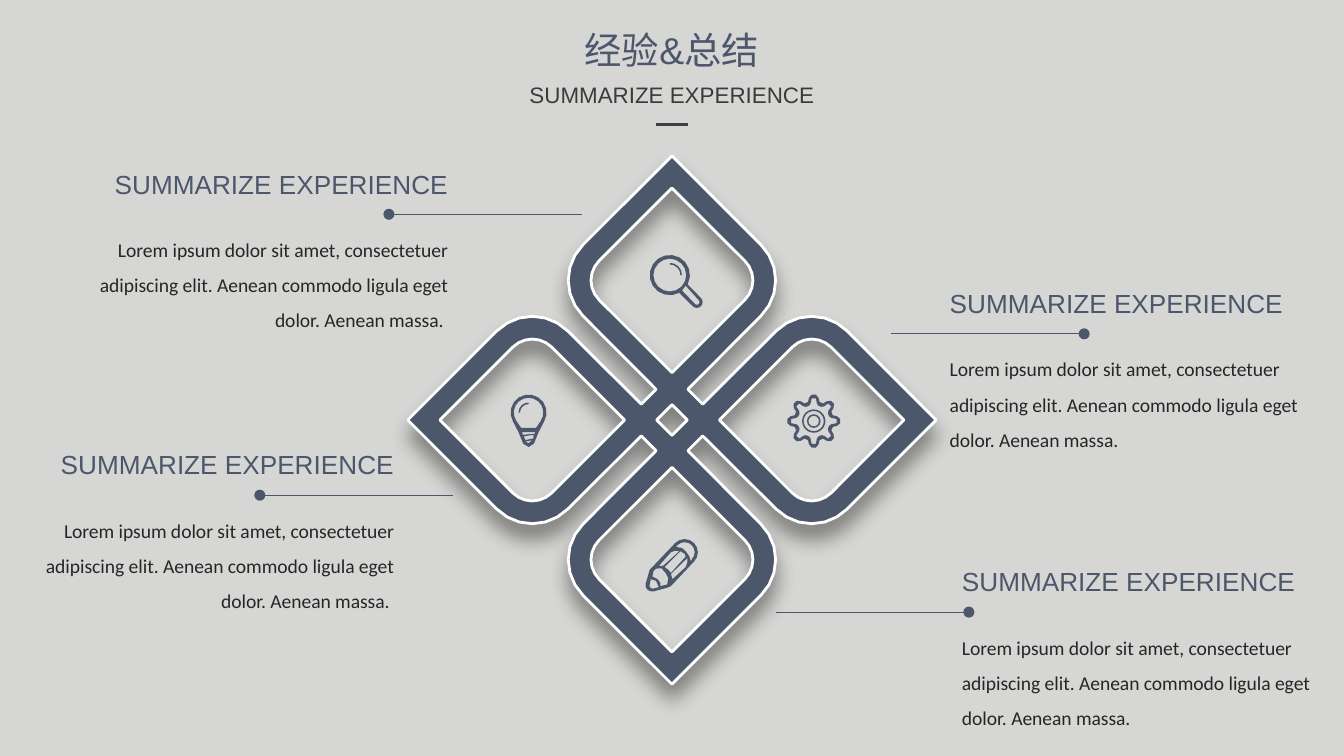
import math

from lxml import etree
from pptx import Presentation
from pptx import util as u
from pptx.dml.color import RGBColor
from pptx.enum import shapes, text
from pptx.oxml import ns

SLATE, WHITE = "4C576B", "FFFFFF"
LOREM = ("Lorem ipsum dolor sit amet, consectetuer adipiscing elit. "
         "Aenean commodo ligula eget dolor. Aenean massa.")
LEFT, CENTER, RIGHT = text.PP_ALIGN.LEFT, text.PP_ALIGN.CENTER, text.PP_ALIGN.RIGHT


def color(value):
    return RGBColor.from_string(value)


def add_text(slide, box, words, size, font, ink, align, spacing=None, wrap=True):
    shape = slide.shapes.add_textbox(*(u.Cm(length) for length in box))
    frame = shape.text_frame
    frame.word_wrap = wrap
    frame.auto_size = text.MSO_AUTO_SIZE.SHAPE_TO_FIT_TEXT
    paragraph = frame.paragraphs[0]
    paragraph.alignment = align
    if spacing:
        paragraph.line_spacing = spacing
    run = paragraph.add_run()
    run.text = words
    run.font.size = u.Pt(size)
    run.font.name = font
    run.font.color.rgb = color(ink)


def add_line(slide, start, end, ink, width, dot=False):
    line = slide.shapes.add_connector(
        shapes.MSO_CONNECTOR.STRAIGHT, *(u.Cm(length) for length in start + end))
    line.line.color.rgb = color(ink)
    line.line.width = u.Pt(width)
    if dot:
        outline = line._element.spPr.find(ns.qn("a:ln"))
        etree.SubElement(outline, ns.qn("a:tailEnd"), type="oval")
    etree.SubElement(line._element.spPr, ns.qn("a:effectLst"))


def paint(shape):
    shape.shadow.inherit = False
    shape.fill.solid()
    shape.fill.fore_color.rgb = color(SLATE)
    shape.line.fill.background()


def add_outline(slide, left, top, contours):
    """Fill closed contours, given in cm from (left, top); inner ones are holes."""
    builder = None
    for contour in contours:
        points = [(u.Cm(left + x), u.Cm(top + y)) for x, y in contour]
        if builder is None:
            builder = slide.shapes.build_freeform(*points[0], scale=1.0)
        else:
            builder.move_to(*points[0])
        builder.add_line_segments(points[1:], close=True)
    shape = builder.convert_to_shape()
    paint(shape)
    return shape


def add_ring(slide, x, y, outer, inner):
    shape = slide.shapes.add_shape(
        shapes.MSO_SHAPE.DONUT, u.Cm(x - outer), u.Cm(y - outer),
        u.Cm(2 * outer), u.Cm(2 * outer))
    shape.adjustments[0] = (outer - inner) / (2 * outer)
    paint(shape)


def arc(x, y, radius, start, end, step=22.5):
    steps = math.ceil(abs(end - start) / step)
    angles = [math.radians(start + (end - start) * i / steps) for i in range(steps + 1)]
    return [(x + radius * math.cos(a), y + radius * math.sin(a)) for a in angles]


def crescent(x, y, outer, inner, start, end):
    return arc(x, y, outer, start, end) + arc(x, y, inner, end, start)


def rotate(points, degrees):
    c, s = math.cos(math.radians(degrees)), math.sin(math.radians(degrees))
    return [(x * c - y * s, x * s + y * c) for x, y in points]


# Heading at the top of the slide
def add_header(slide, center, top):
    add_text(slide, (center - 4.43, top + 1.02, 8.86, 0.76),
             "SUMMARIZE EXPERIENCE", 12, "Arial", "3B3B3B", CENTER)
    add_text(slide, (center - 2.99, top, 5.98, 1.12),
             "经验&总结", 20, "Arial", SLATE, CENTER)
    add_line(slide, (center - 0.3, top + 1.98), (center + 0.3, top + 1.98), "404040", 1.5)


# Four interlaced petals with rounded side corners
def add_petals(slide, x, y):
    reach, corner = 2.64, 1.01

    def half_petal(radius):
        """Tip, then the rounded corner on the right."""
        tip = -reach - corner - radius * math.sqrt(2)
        return [(0, tip)] + arc(corner, -reach, radius, -45, 45, step=15)

    def mirrored(points):
        return [(-px, py) for px, py in reversed(points)]

    outer = half_petal(0.95) + [(0.3, -0.58)]
    petal = mirrored(outer) + outer[1:]
    inner = half_petal(0.52)
    window = inner + [(0, -2 * reach - inner[0][1])] + mirrored(inner[1:])
    turns = (0, 90, 180, 270)
    outline = [point for turn in turns for point in rotate(petal, turn)]
    center = [rotate([(0, -0.29)], turn)[0] for turn in turns]
    shape = add_outline(slide, x, y,
                        [outline, center] + [rotate(window, turn) for turn in turns])
    shape.line.color.rgb = color(WHITE)
    shape.line.width = u.Pt(1.5)
    effects = shape._element.spPr.find(ns.qn("a:effectLst"))
    shadow = etree.SubElement(effects, ns.qn("a:outerShdw"), blurRad=str(u.Pt(11)),
                              dist=str(u.Pt(8)), dir="5400000", algn="t", rotWithShape="0")
    black = etree.SubElement(shadow, ns.qn("a:srgbClr"), val="000000")
    etree.SubElement(black, ns.qn("a:alpha"), val="40000")


# Heading, pointer line and body text beside a petal
def add_callout(slide, left, top, line_start, align):
    width, heading_width, line_length = 7.37, 6.86, 3.65
    on_left = align == RIGHT
    heading_left = left + width - heading_width if on_left else left
    line_end = line_start - line_length if on_left else line_start + line_length
    add_line(slide, (line_start, top + 1), (line_end, top + 1), SLATE, 0.5, dot=True)
    add_text(slide, (left, top + 1.1, width, 2.29), LOREM + (" " if on_left else ""),
             10.5, "Calibri", "262626", align, spacing=1.5)
    add_text(slide, (heading_left, top, heading_width, 0.86),
             "SUMMARIZE EXPERIENCE", 14, "Arial", SLATE, align, wrap=False)


# Icons, each about 1 cm high
def add_pencil(slide, left, top):
    body = (arc(0.74, 0.25, 0.25, -135, 45) + [(0.48, 0.89), (0.41, 0.92), (0.15, 0.99)]
            + arc(0.12, 0.87, 0.12, 90, 190) + [(0.08, 0.58), (0.13, 0.53)])
    eraser = arc(0.74, 0.25, 0.19, -135, 45) + [
        (0.86, 0.43), (0.83, 0.33), (0.76, 0.23), (0.69, 0.17), (0.58, 0.15)]
    stripes = [
        [(0.25, 0.51), (0.48, 0.25), (0.56, 0.22), (0.64, 0.23), (0.33, 0.51)],
        [(0.36, 0.53), (0.43, 0.58), (0.48, 0.64), (0.76, 0.33), (0.74, 0.28), (0.66, 0.23)],
        [(0.48, 0.66), (0.51, 0.76), (0.76, 0.53), (0.79, 0.45), (0.79, 0.36)]]
    wood = [(0.28, 0.89), (0.28, 0.83), (0.23, 0.76), (0.13, 0.71), (0.15, 0.61),
            (0.2, 0.56), (0.3, 0.55), (0.38, 0.64), (0.43, 0.74), (0.41, 0.86)]
    lead = [(0.13, 0.94), (0.08, 0.91), (0.08, 0.86), (0.1, 0.76), (0.2, 0.79), (0.25, 0.91)]
    add_outline(slide, left, top, [body, eraser, *stripes, wood, lead])


def add_bulb(slide, left, top):
    glass = arc(0.34, 0.34, 0.34, 150, 390) + [
        (0.53, 0.71), (0.44, 0.93), (0.34, 0.99), (0.24, 0.93), (0.15, 0.71)]
    inside = arc(0.34, 0.34, 0.28, 145, 395) + [(0.48, 0.63), (0.2, 0.63)]
    bands = [[(0.22, 0.71), (0.46, 0.71), (0.46, 0.74), (0.23, 0.76)],
             [(0.25, 0.79), (0.43, 0.76), (0.43, 0.83), (0.28, 0.86)],
             [(0.28, 0.89), (0.41, 0.86), (0.34, 0.92)]]
    add_outline(slide, left, top, [glass, inside, *bands])
    add_outline(slide, left, top, [crescent(0.34, 0.34, 0.19, 0.16, 180, 270)])


def add_gear(slide, left, top):
    x, y = left + 0.5, top + 0.5
    outer_tooth = [(-0.11, -0.36), (-0.09, -0.44), (-0.04, -0.5),
                   (0.04, -0.5), (0.09, -0.44), (0.11, -0.36)]
    inner_tooth = [(-0.09, -0.29), (-0.06, -0.33), (-0.04, -0.43),
                   (0.04, -0.43), (0.06, -0.33), (0.09, -0.29)]
    rims = [[point for k in range(8) for point in rotate(tooth, 45 * k)]
            for tooth in (outer_tooth, inner_tooth)]
    add_outline(slide, x, y, rims)
    add_ring(slide, x, y, 0.22, 0.19)
    add_ring(slide, x, y, 0.13, 0.1)


def add_magnifier(slide, left, top):
    frame = (arc(0.38, 0.38, 0.38, 62, 385) + [(0.72, 0.56)]
             + arc(0.89, 0.89, 0.11, -45, 135) + [(0.56, 0.72)])
    handle = [(0.61, 0.67), (0.68, 0.58)] + arc(0.89, 0.89, 0.05, -45, 135)
    lens = arc(0.38, 0.38, 0.31, 0, 360)
    add_outline(slide, left, top, [frame, handle, lens])
    add_outline(slide, left, top, [crescent(0.38, 0.38, 0.23, 0.2, -90, 0)])


def main():
    presentation = Presentation()
    presentation.slide_width, presentation.slide_height = u.Cm(25.4), u.Cm(14.29)
    slide = presentation.slides.add_slide(presentation.slide_layouts[6])
    slide.background.fill.solid()
    slide.background.fill.fore_color.rgb = color("D6D6D4")

    add_header(slide, 12.7, 0.38)
    add_petals(slide, 12.7, 7.94)
    for callout in ((17.7, 5.31, 16.84, LEFT), (17.93, 10.57, 14.66, LEFT),
                    (1.35, 3.05, 11, RIGHT), (0.33, 8.36, 8.56, RIGHT)):
        add_callout(slide, *callout)
    add_pencil(slide, 12.2, 10.19)
    add_bulb(slide, 9.65, 7.46)
    add_gear(slide, 14.88, 7.46)
    add_magnifier(slide, 12.28, 4.82)
    presentation.save("out.pptx")


if __name__ == "__main__":
    main()
